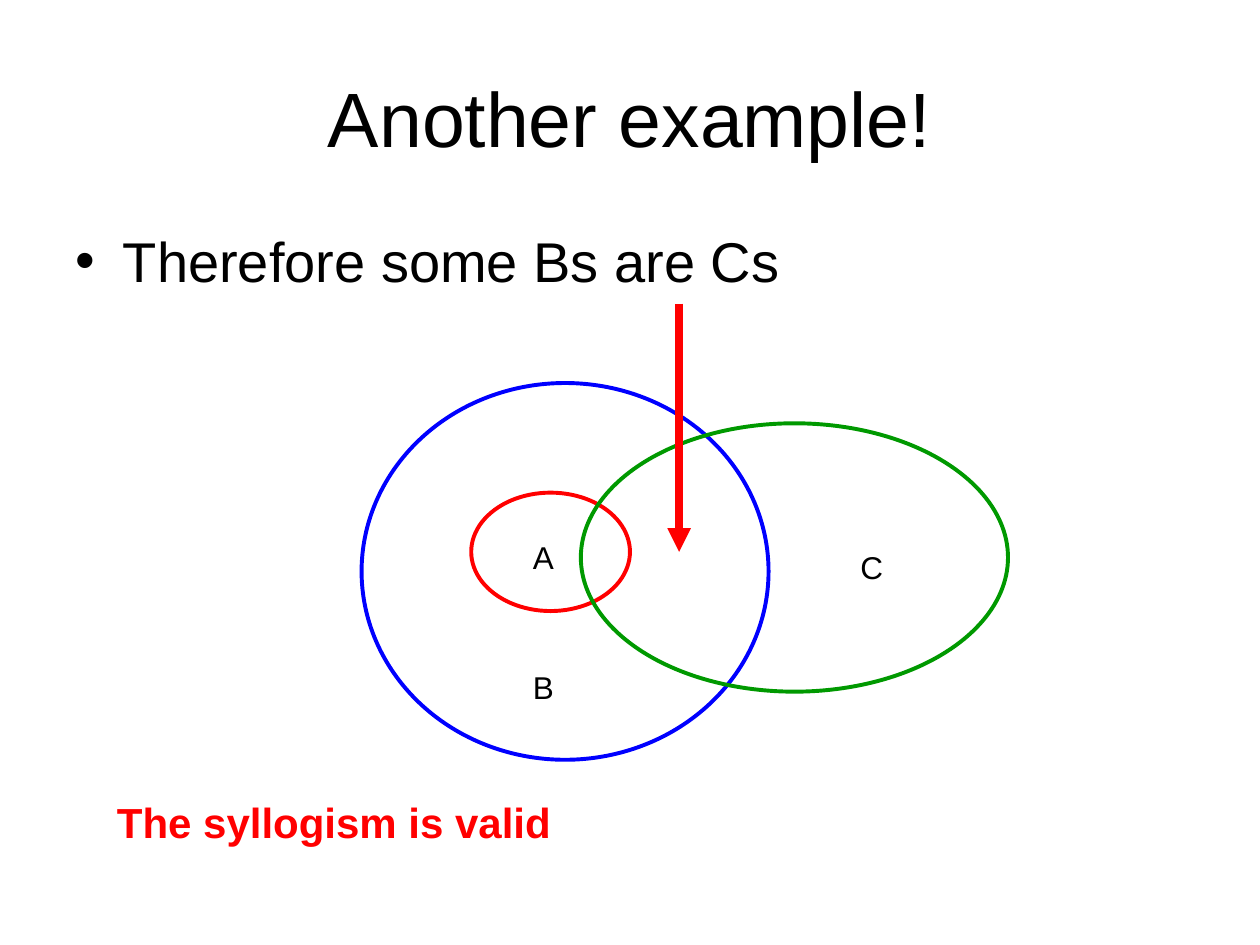
from lxml.etree import SubElement
from pptx import Presentation
from pptx.dml.color import RGBColor
from pptx.enum.shapes import MSO_CONNECTOR as Conn, MSO_SHAPE as Kind
from pptx.enum.text import MSO_ANCHOR as Anchor, PP_ALIGN as Align
from pptx.oxml.ns import qn
from pptx.util import Inches, Pt

WIDE, HIGH = Inches(10), Inches(7.5)
BLACK, RED, BLUE, GREEN = "000000", "FF0000", "0000FF", "009900"


def color(code):
    return RGBColor.from_string(code)


def spot(x, y):
    """Turn percentages of the slide's width and height into lengths."""
    return round(WIDE * x / 100), round(HIGH * y / 100)


def write(frame, text, size, code=BLACK, bold=False):
    frame.text = text
    frame.word_wrap = True
    font = frame.paragraphs[0].runs[0].font
    font.name, font.size, font.bold = "Arial", Pt(size), bold
    font.color.rgb = color(code)


def fill_holder(holder, box, text, size):
    holder.left, holder.top = spot(*box[:2])
    holder.width, holder.height = spot(*box[2:])
    write(holder.text_frame, text, size)


def add_label(slide, box, text, size=18, code=BLACK, bold=False):
    label = slide.shapes.add_textbox(*spot(*box[:2]), *spot(*box[2:]))
    write(label.text_frame, text, size, code, bold)


def add_set(slide, box, code):
    ring = slide.shapes.add_shape(Kind.OVAL, *spot(*box[:2]), *spot(*box[2:]))
    ring.shadow.inherit = False
    ring.fill.background()
    ring.line.color.rgb = color(code)
    ring.line.width = Pt(2.25)


def add_arrow(slide, start, end, code):
    arrow = slide.shapes.add_connector(Conn.STRAIGHT, *spot(*start), *spot(*end))
    arrow.line.color.rgb = color(code)
    arrow.line.width = Pt(4.5)
    SubElement(arrow.line._get_or_add_ln(), qn("a:tailEnd"), type="triangle")
    SubElement(arrow._element.spPr, qn("a:effectLst"))


def main():
    deck = Presentation()
    deck.slide_width, deck.slide_height = WIDE, HIGH
    slide = deck.slides.add_slide(deck.slide_layouts[1])

    # Title and conclusion
    title, body = slide.placeholders
    fill_holder(title, (5, 4, 90, 16.67), "Another example!", 44)
    title.text_frame.vertical_anchor = Anchor.MIDDLE
    title.text_frame.paragraphs[0].alignment = Align.CENTER
    fill_holder(body, (5, 23.33, 90, 66), "Therefore some Bs are Cs", 32)

    # Venn diagram: name, ring, colour, label place
    sets = [
        ("A", (37.4, 52.13, 12.6, 12.53), RED, (41.3, 56.27)),
        ("B", (28.7, 40.53, 32.3, 39.87), BLUE, (41.3, 70)),
        ("C", (46.1, 44.8, 33.9, 28.4), GREEN, (67.3, 57.33)),
    ]
    for name, ring, code, place in sets:
        add_set(slide, ring, code)
        add_label(slide, (*place, 7.5, 5.33), name)

    # Arrow to the overlap of B and C, then the verdict
    add_arrow(slide, (53.9, 32.13), (53.9, 58.4), RED)
    add_label(slide, (8.3, 83.6, 50.4, 6.67), "The syllogism is valid", 24, RED, True)

    deck.save("out.pptx")


if __name__ == "__main__":
    main()
